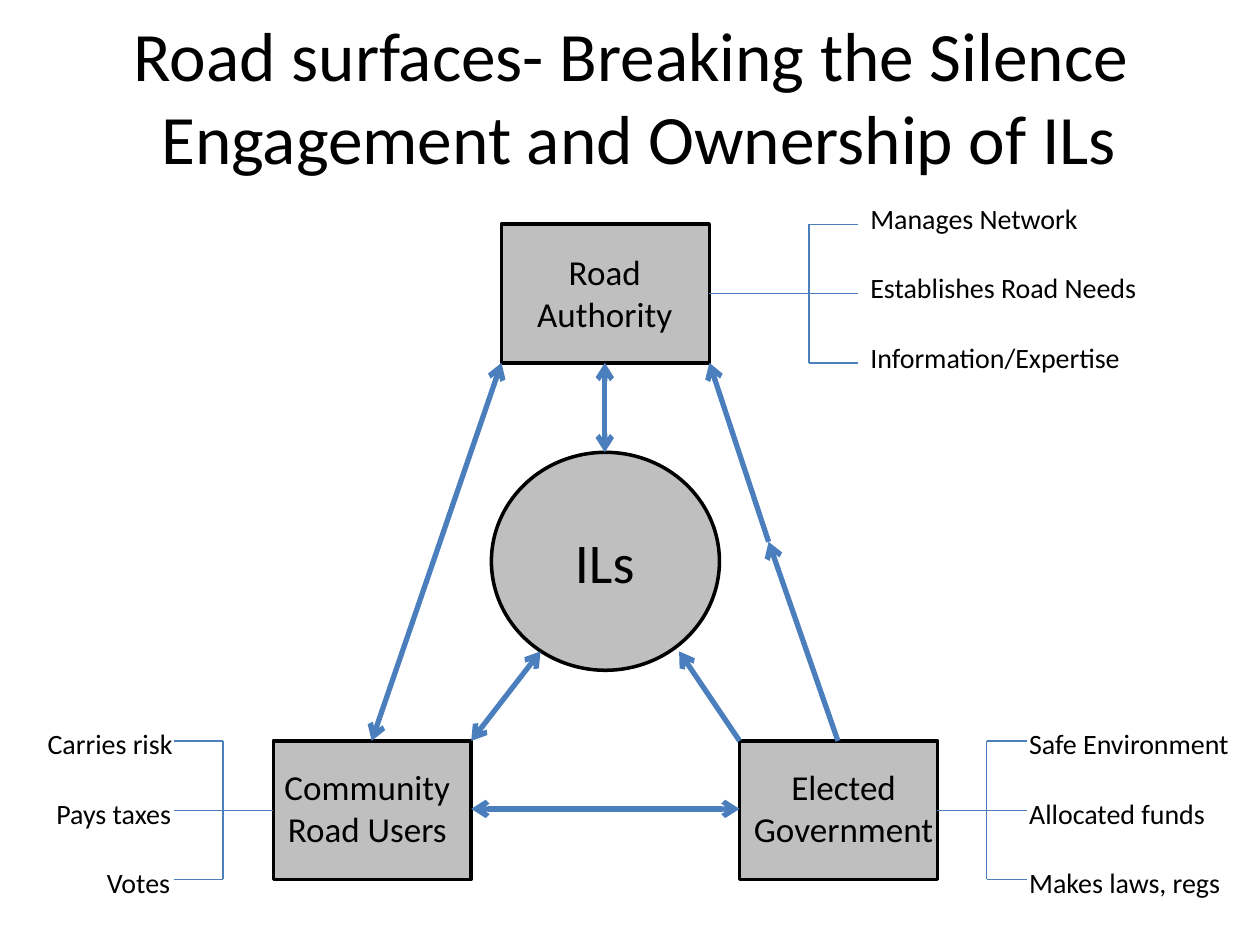
import pptx
import pptx.dml.color
import pptx.enum.shapes
import pptx.enum.text
import pptx.util
from lxml import etree
from pptx.util import Inches

FONT = "Calibri"
BLACK, GREY, BLUE = "000000", "BFBFBF", "4B7EBC"
BOX_HEIGHT = 1.1
ROW_GAP = BOX_HEIGHT / 2
LABEL_RISE = 0.23  # the first bracket label starts this far above its branch

TITLE = "Road surfaces- Breaking the Silence\v Engagement and Ownership of ILs"

# kind, left, top, width, height
NODES = [
    ("OVAL", 3.9, 3.59, 1.81, 1.73),
    ("RECTANGLE", 3.98, 1.78, 1.65, BOX_HEIGHT),
    ("RECTANGLE", 2.17, 5.88, 1.57, BOX_HEIGHT),
    ("RECTANGLE", 5.87, 5.88, 1.57, BOX_HEIGHT),
]
# text, left, top, width, height, size
NODE_LABELS = [
    ("Road\nAuthority", 4.13, 1.94, 1.34, 0.77, 20),
    ("Elected Government", 5.87, 6.03, 1.65, 0.77, 20),
    ("Community Road Users", 2.09, 6.03, 1.65, 0.77, 20),
    ("ILs", 4.13, 4.14, 1.34, 0.64, 32),
]
# box edge, spine, branch tip, top, label width, labels with their left edges
BRACKETS = [
    (5.63, 6.42, 6.81, 1.78, 2.83, [("Manages Network", 6.81),
                                    ("Establishes Road Needs", 6.81),
                                    ("Information/Expertise", 6.81)]),
    (7.44, 7.83, 8.15, 5.88, 1.93, [("Safe Environment", 8.07),
                                    ("Allocated funds", 8.07),
                                    ("Makes laws, regs", 8.07)]),
    (2.17, 1.77, 1.38, 5.88, 2.36, [("Carries risk", 0.28),
                                    ("Pays taxes", 0.35),
                                    ("Votes", 0.75)]),
]
# from, to, arrowheads at both ends
ARROWS = [
    ((6.65, 5.88), (6.1, 4.3), False),
    ((4.8, 2.88), (4.8, 3.59), True),
    ((4.29, 5.17), (3.74, 5.88), True),
    ((5.87, 5.88), (5.39, 5.17), False),
    ((3.98, 2.88), (2.95, 5.88), True),
    ((3.74, 6.42), (5.87, 6.42), True),
    ((6.1, 4.3), (5.63, 2.88), False),
]


def color(hex_code):
    return pptx.dml.color.RGBColor.from_string(hex_code)


def format_text(frame, size, align):
    for paragraph in frame.paragraphs:
        paragraph.alignment = getattr(pptx.enum.text.PP_ALIGN, align)
        paragraph.font.size = pptx.util.Pt(size)
        paragraph.font.name = FONT
        paragraph.font.color.rgb = color(BLACK)


def add_label(slide, text, left, top, width, height, size, align):
    label = slide.shapes.add_textbox(*map(Inches, (left, top, width, height)))
    frame = label.text_frame
    frame.word_wrap = True
    frame.text = text
    format_text(frame, size, align)


def add_node(slide, kind, *place):
    shape_type = getattr(pptx.enum.shapes.MSO_SHAPE, kind)
    node = slide.shapes.add_shape(shape_type, *map(Inches, place))
    node.shadow.inherit = False
    node.fill.solid()
    node.fill.fore_color.rgb = color(GREY)
    node.line.color.rgb = color(BLACK)
    node.line.width = pptx.util.Pt(2)


def add_line(slide, start, end, width, heads=()):
    """Draw a line; heads lists the ends ("headEnd", "tailEnd") with arrows."""
    line = slide.shapes.add_connector(
        pptx.enum.shapes.MSO_CONNECTOR.STRAIGHT, *map(Inches, start + end))
    line.line.color.rgb = color(BLUE)
    line.line.width = pptx.util.Pt(width)
    properties = line._element.spPr
    for head in heads:
        etree.SubElement(line.line._get_or_add_ln(),
                         pptx.oxml.ns.qn("a:" + head), type="arrow")
    etree.SubElement(properties, pptx.oxml.ns.qn("a:effectLst"))


def add_bracket(slide, edge, spine, tip, top, label_width, labels):
    middle, bottom = top + ROW_GAP, top + BOX_HEIGHT
    add_line(slide, (edge, middle), (spine, middle), 0.75)
    add_line(slide, (spine, bottom), (spine, top), 0.75)
    for row, (text, left) in enumerate(labels):
        y = top + row * ROW_GAP
        add_line(slide, (spine, y), (tip, y), 0.75)
        add_label(slide, text, left, y + 0.07 - LABEL_RISE if edge != 5.63
                  else y - LABEL_RISE, label_width, 0.37, 16, "LEFT")


def main():
    deck = pptx.Presentation()
    deck.slide_width, deck.slide_height = Inches(10), Inches(7.5)
    slide = deck.slides.add_slide(deck.slide_layouts[5])

    title = slide.shapes.title
    title.left, title.top, title.width, title.height = map(
        Inches, (0.51, 0.13, 9, 1.25))
    title.text_frame.text = TITLE
    title.text_frame.vertical_anchor = pptx.enum.text.MSO_ANCHOR.MIDDLE
    format_text(title.text_frame, 39.6, "CENTER")

    for node in NODES:
        add_node(slide, *node)
    for bracket in BRACKETS:
        add_bracket(slide, *bracket)
    for label in NODE_LABELS:
        add_label(slide, *label, "CENTER")
    for start, end, both in ARROWS:
        add_line(slide, start, end, 3,
                 ("headEnd", "tailEnd") if both else ("tailEnd",))

    deck.save("out.pptx")


if __name__ == "__main__":
    main()
